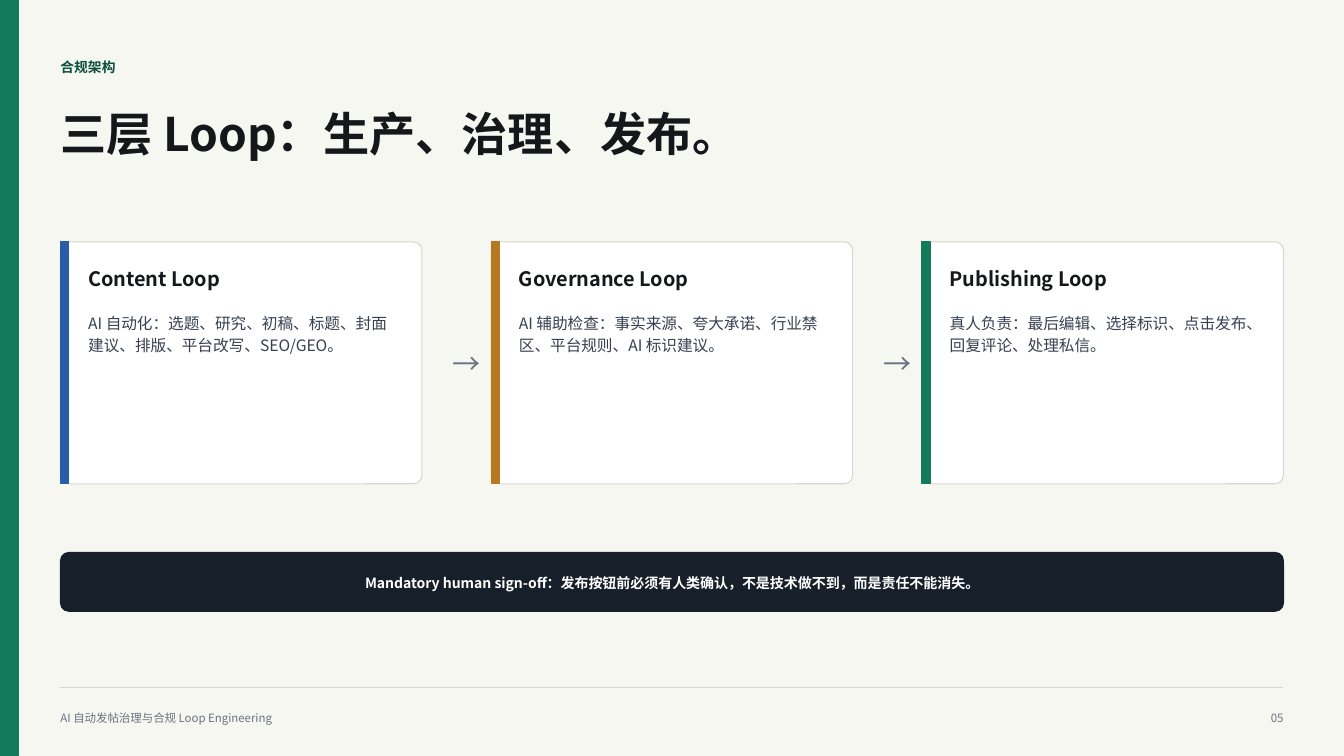
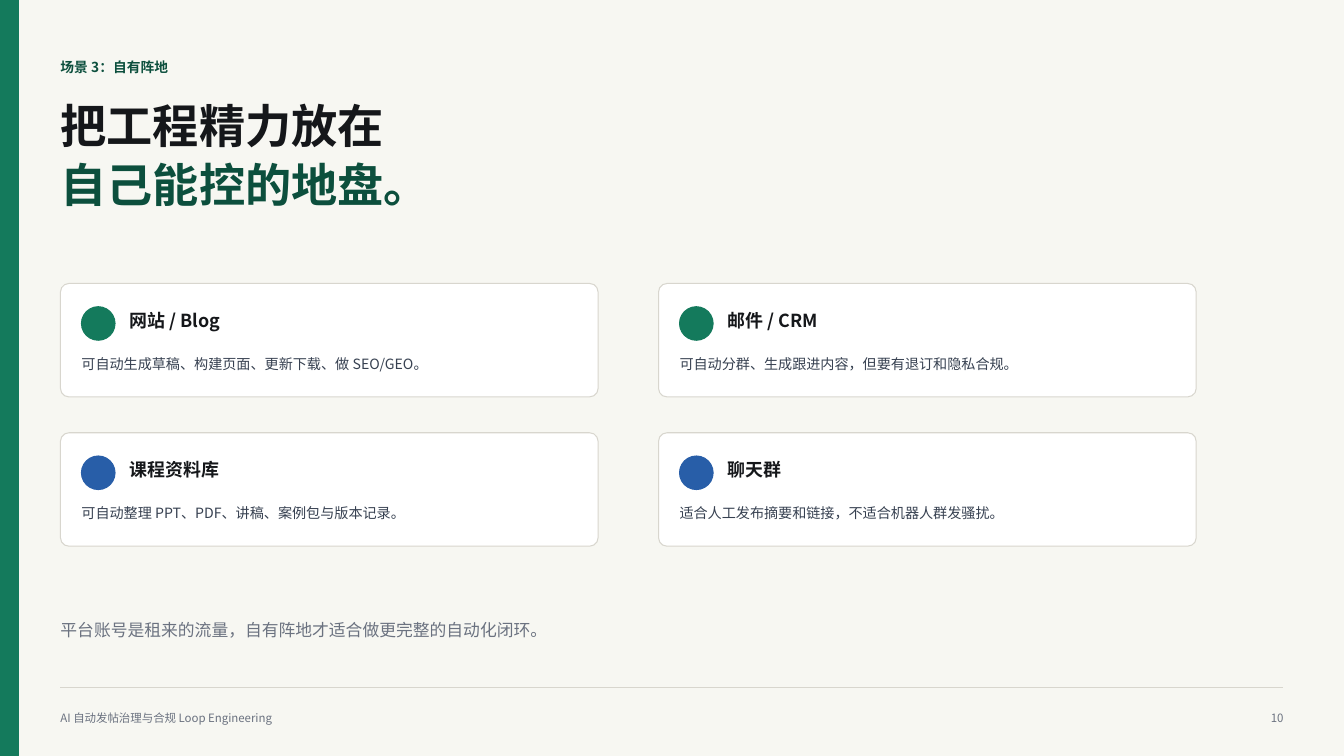
from lxml import etree
from pptx import Presentation
from pptx.dml.color import RGBColor
from pptx.enum.shapes import MSO_CONNECTOR, MSO_SHAPE
from pptx.enum.text import MSO_ANCHOR, PP_ALIGN
from pptx.oxml.ns import qn
from pptx.util import Inches, Pt

RECTANGLE = MSO_SHAPE.RECTANGLE
ROUNDED = MSO_SHAPE.ROUNDED_RECTANGLE
OVAL = MSO_SHAPE.OVAL
STRAIGHT = MSO_CONNECTOR.STRAIGHT
LEFT, CENTER, RIGHT = PP_ALIGN.LEFT, PP_ALIGN.CENTER, PP_ALIGN.RIGHT
MIDDLE = MSO_ANCHOR.MIDDLE

WIDTH, HEIGHT = Inches(40 / 3), Inches(7.5)
MARGIN, CONTENT = 4.5, 91
FONT = "Noto Sans CJK SC"
FOOTER = "AI 自动发帖治理与合规 Loop Engineering"
COLORS = {
    "paper": "F7F7F2",
    "white": "FFFFFF",
    "rule": "D8D6CE",
    "ink": "15171A",
    "body": "374151",
    "muted": "6B7280",
    "night": "17202A",
    "green": "147A5C",
    "forest": "0C4F3D",
    "blue": "285EA8",
    "amber": "B7791F",
}

LOOPS = [
    ("Content Loop", "AI 自动化：选题、研究、初稿、标题、封面建议、排版、平台改写、SEO/GEO。", "blue"),
    ("Governance Loop", "AI 辅助检查：事实来源、夸大承诺、行业禁区、平台规则、AI 标识建议。", "amber"),
    ("Publishing Loop", "真人负责：最后编辑、选择标识、点击发布、回复评论、处理私信。", "green"),
]
CHANNELS = [
    ("网站 / Blog", "可自动生成草稿、构建页面、更新下载、做 SEO/GEO。", "green"),
    ("邮件 / CRM", "可自动分群、生成跟进内容，但要有退订和隐私合规。", "green"),
    ("课程资料库", "可自动整理 PPT、PDF、讲稿、案例包与版本记录。", "blue"),
    ("聊天群", "适合人工发布摘要和链接，不适合机器人群发骚扰。", "blue"),
]


def color(name):
    return RGBColor.from_string(COLORS[name])


def across(share):
    return round(WIDTH * share / 100)


def down(share):
    return round(HEIGHT * share / 100)


def frame(left, top, width, height):
    return across(left), down(top), across(width), down(height)


def write(shape, text, size, tint, bold=False, align=LEFT, spacing=1.12):
    text_frame = shape.text_frame
    text_frame.word_wrap = True
    text_frame.margin_left = text_frame.margin_right = 0
    text_frame.margin_top = text_frame.margin_bottom = 0
    paragraph = text_frame.paragraphs[0]
    paragraph.alignment = align
    paragraph.line_spacing = spacing
    run = paragraph.add_run()
    run.text = text
    run.font.size = Pt(size)
    run.font.bold = bold
    run.font.color.rgb = color(tint)
    run.font.name = FONT
    etree.SubElement(run._r.get_or_add_rPr(), qn("a:ea"), typeface=FONT)


def add_text(slide, box, text, size, tint, **style):
    write(slide.shapes.add_textbox(*frame(*box)), text, size, tint, **style)


def add_block(slide, kind, box, fill, line=None, corner=None):
    shape = slide.shapes.add_shape(kind, *frame(*box))
    shape.shadow.inherit = False
    shape.fill.solid()
    shape.fill.fore_color.rgb = color(fill)
    shape.line.color.rgb = color(line or fill)
    shape.line.width = Pt(0.75)
    if corner is not None:
        shape.adjustments[0] = corner
    return shape


def add_rule(slide, top):
    rule = slide.shapes.add_connector(
        STRAIGHT, across(MARGIN), down(top), across(MARGIN + CONTENT), down(top))
    rule.line.color.rgb = color("rule")
    rule.line.width = Pt(0.75)
    etree.SubElement(rule._element.spPr, qn("a:effectLst"))


def add_title(slide, top, text, tint="ink"):
    add_text(slide, (MARGIN, top, 70, 7.5), text, 33, tint, bold=True, spacing=0.96)


def add_base(presentation, section, number):
    slide = presentation.slides.add_slide(presentation.slide_layouts[6])
    slide.background.fill.solid()
    slide.background.fill.fore_color.rgb = color("paper")
    add_block(slide, RECTANGLE, (0, 0, 1.4, 100), "green")
    add_rule(slide, 90.9)
    add_text(slide, (MARGIN, 93.9, 50, 3.3), FOOTER, 8.2, "muted")
    add_text(slide, (MARGIN + CONTENT - 3.75, 93.9, 3.75, 3.3), number, 8.2, "muted", align=RIGHT)
    add_text(slide, (MARGIN, 7.5, 67.2, 3.3), section, 9.8, "forest", bold=True)
    return slide


def add_loop_card(slide, left, top, width, height, heading, body, accent):
    add_block(slide, ROUNDED, (left, top, width, height), "white", "rule", 0.035)
    add_block(slide, RECTANGLE, (left, top, 0.6, height), accent)
    add_text(slide, (left + 2.06, top + 2.93, 23.2, 3.9), heading, 14.2, "ink", bold=True)
    add_text(slide, (left + 2.06, top + 9.07, 22.9, 20.8), body, 11.2, "body", spacing=1.18)


def add_channel_card(slide, left, top, heading, body, accent):
    add_block(slide, ROUNDED, (left, top, 40, 15), "white", "rule", 0.074)
    add_block(slide, OVAL, (left + 1.56, top + 3.07, 2.5, 4.44), accent)
    add_text(slide, (left + 5.15, top + 3.07, 33.15, 3.2), heading, 12.8, "ink", bold=True)
    add_text(slide, (left + 1.56, top + 9.2, 36.9, 4.4), body, 10.1, "body", spacing=1.13)


def build_loops(presentation):
    slide = add_base(presentation, "合规架构", "05")
    add_title(slide, 14.4, "三层 Loop：生产、治理、发布。")
    top, width, height = 32, 26.9, 32
    pitch = (CONTENT - width) / (len(LOOPS) - 1)
    for index, loop in enumerate(LOOPS):
        left = MARGIN + index * pitch
        add_loop_card(slide, left, top, width, height, *loop)
        if index:
            add_text(slide, (left - 3.4, 45.33, 3.15, 5), "→", 20.1, "muted", align=CENTER)
    banner = add_block(slide, ROUNDED, (MARGIN, 73.07, CONTENT, 7.8), "night", corner=0.143)
    banner.text_frame.vertical_anchor = MIDDLE
    write(banner, "Mandatory human sign-off：发布按钮前必须有人类确认，不是技术做不到，而是责任不能消失。",
          10, "white", bold=True, align=CENTER)


def build_channels(presentation):
    slide = add_base(presentation, "场景 3：自有阵地", "10")
    add_title(slide, 13.3, "把工程精力放在")
    add_title(slide, 21.1, "自己能控的地盘。", "forest")
    for index, channel in enumerate(CHANNELS):
        row, column = divmod(index, 2)
        add_channel_card(slide, MARGIN + column * 44.5, 37.5 + row * 19.75, *channel)
    add_text(slide, (MARGIN, 81.6, 71.85, 3.1),
             "平台账号是租来的流量，自有阵地才适合做更完整的自动化闭环。", 12, "muted")


def main():
    presentation = Presentation()
    presentation.slide_width, presentation.slide_height = WIDTH, HEIGHT
    build_loops(presentation)
    build_channels(presentation)
    presentation.save("out.pptx")


if __name__ == "__main__":
    main()
